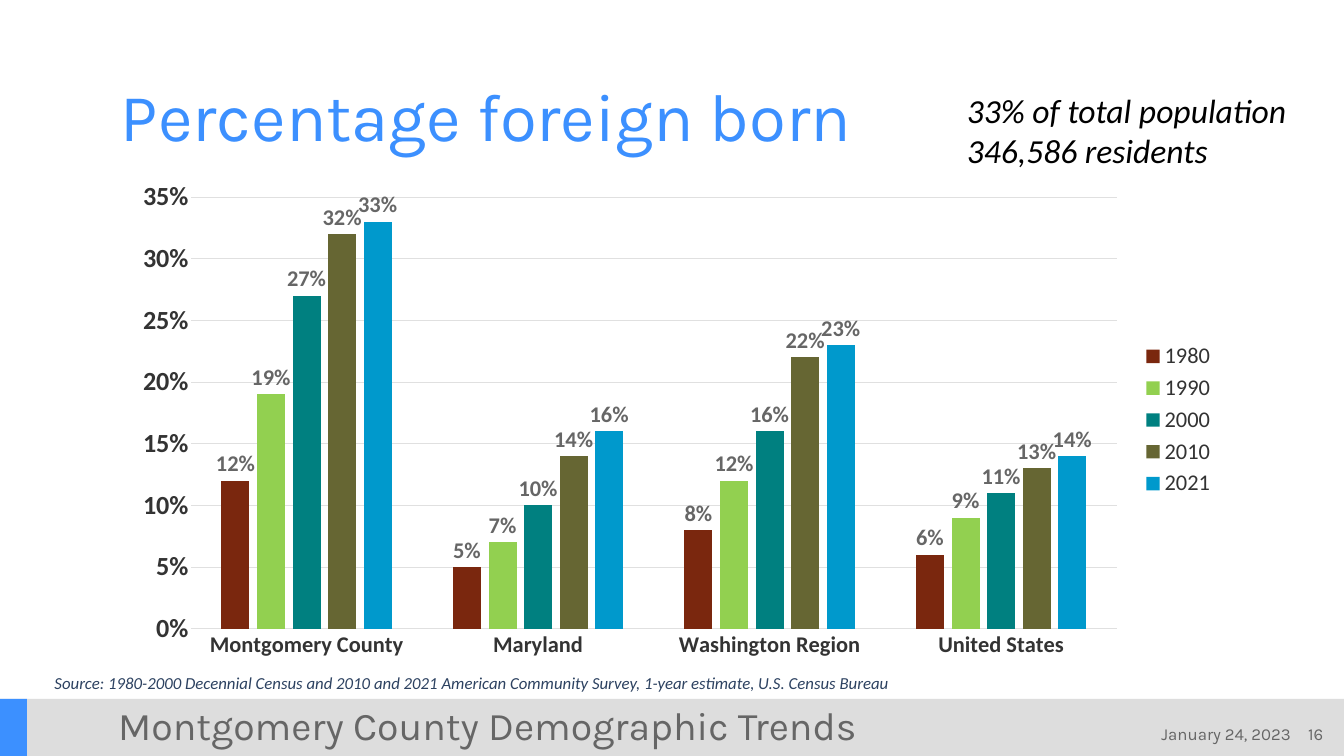
from pptx import Presentation
from pptx.chart.data import CategoryChartData
from pptx.dml.color import RGBColor
from pptx.enum import chart as chart_enum, shapes, text
from pptx.util import Inches, Pt

WHITE = RGBColor(0xFF, 0xFF, 0xFF)
BLACK = RGBColor(0x00, 0x00, 0x00)
BLUE = RGBColor(0x3C, 0x90, 0xFF)
NAVY = RGBColor(0x2D, 0x42, 0x61)
BAND = RGBColor(0xDD, 0xDD, 0xDD)
RULE = RGBColor(0xE0, 0xE0, 0xE0)
GRAY = RGBColor(0x66, 0x66, 0x66)
DARK = RGBColor(0x33, 0x33, 0x33)

REGIONS = ["Montgomery County", "Maryland", "Washington Region", "United States"]
FOREIGN_BORN = [
    ("1980", (0.12, 0.05, 0.08, 0.06), RGBColor(0x7A, 0x27, 0x0E)),
    ("1990", (0.19, 0.07, 0.12, 0.09), RGBColor(0x92, 0xD0, 0x50)),
    ("2000", (0.27, 0.10, 0.16, 0.11), RGBColor(0x00, 0x80, 0x80)),
    ("2010", (0.32, 0.14, 0.22, 0.13), RGBColor(0x66, 0x66, 0x33)),
    ("2021", (0.33, 0.16, 0.23, 0.14), RGBColor(0x00, 0x99, 0xCC)),
]


class SlideBuilder:
    """Holds the slide and its fonts, and adds each kind of element."""

    heading_font = "Karla"
    body_font = "Calibri"

    def __init__(self, presentation):
        self.slide = presentation.slides.add_slide(presentation.slide_layouts[5])
        self.slide.background.fill.solid()
        self.slide.background.fill.fore_color.rgb = WHITE

    def style(self, font, name, size, color, bold=False, italic=False):
        font.name = name
        font.size = Pt(size)
        font.color.rgb = color
        font.bold = bold
        font.italic = italic

    def place(self, box):
        return [Inches(length) for length in box]

    def set_insets(self, frame, left, top, right, bottom):
        frame.margin_left, frame.margin_top = Inches(left), Inches(top)
        frame.margin_right, frame.margin_bottom = Inches(right), Inches(bottom)

    def bar(self, box, color):
        shape = self.slide.shapes.add_shape(shapes.MSO_SHAPE.RECTANGLE, *self.place(box))
        shape.shadow.inherit = False
        shape.fill.solid()
        shape.fill.fore_color.rgb = color
        shape.line.fill.background()

    def title(self, words, box):
        title = self.slide.shapes.title
        title.left, title.top, title.width, title.height = self.place(box)
        frame = title.text_frame
        frame.text = words
        frame.word_wrap = True
        frame.auto_size = text.MSO_AUTO_SIZE.NONE
        frame.vertical_anchor = text.MSO_ANCHOR.BOTTOM
        self.set_insets(frame, 0, 0.05, 0.1, 0)
        paragraph = frame.paragraphs[0]
        paragraph.alignment = text.PP_ALIGN.LEFT
        paragraph.line_spacing = 0.8
        self.style(paragraph.runs[0].font, self.heading_font, 72, BLUE)

    def footer(self, words, box, size, anchor, alignment):
        frame = self.slide.shapes.add_textbox(*self.place(box)).text_frame
        frame.text = words
        frame.word_wrap = True
        frame.vertical_anchor = anchor
        self.set_insets(frame, 0, 0, 0, 0)
        paragraph = frame.paragraphs[0]
        paragraph.alignment = alignment
        self.style(paragraph.runs[0].font, self.heading_font, size, GRAY)

    def note(self, words, box, size, color, insets=(0.1, 0.05, 0.1, 0.05)):
        frame = self.slide.shapes.add_textbox(*self.place(box)).text_frame
        frame.text = words
        frame.word_wrap = False
        frame.auto_size = text.MSO_AUTO_SIZE.SHAPE_TO_FIT_TEXT
        self.set_insets(frame, *insets)
        for paragraph in frame.paragraphs:
            self.style(paragraph.runs[0].font, self.body_font, size, color, italic=True)

    def column_chart(self, categories, series_rows, box):
        data = CategoryChartData(number_format="0%")
        data.categories = categories
        for name, values, _ in series_rows:
            data.add_series(name, values)
        chart = self.slide.shapes.add_chart(
            chart_enum.XL_CHART_TYPE.COLUMN_CLUSTERED, *self.place(box), data
        ).chart
        self.style(chart.font, self.body_font, 10, DARK)
        chart.has_title = False
        chart.has_legend = True
        chart.legend.position = chart_enum.XL_LEGEND_POSITION.RIGHT
        chart.legend.include_in_layout = False
        self.style(chart.legend.font, self.body_font, 24, DARK)
        self.axes(chart)
        plot = chart.plots[0]
        plot.gap_width = 219
        plot.overlap = -27
        plot.vary_by_categories = False
        for series, (_, _, color) in zip(plot.series, series_rows):
            series.format.fill.solid()
            series.format.fill.fore_color.rgb = color
            series.invert_if_negative = False
            labels = series.data_labels
            labels.show_value = True
            labels.number_format = "0%"
            labels.number_format_is_linked = False
            labels.position = chart_enum.XL_LABEL_POSITION.OUTSIDE_END
            self.style(labels.font, self.body_font, 24, GRAY, bold=True)

    def axes(self, chart):
        category_axis, value_axis = chart.category_axis, chart.value_axis
        for axis, size in ((category_axis, 24), (value_axis, 28)):
            axis.major_tick_mark = chart_enum.XL_TICK_MARK.NONE
            axis.minor_tick_mark = chart_enum.XL_TICK_MARK.NONE
            self.style(axis.tick_labels.font, self.body_font, size, DARK, bold=True)
        value_axis.minimum_scale = 0
        value_axis.maximum_scale = 0.35
        value_axis.major_unit = 0.05
        value_axis.tick_labels.number_format = "0%"
        value_axis.tick_labels.number_format_is_linked = False
        value_axis.format.line.fill.background()
        value_axis.has_major_gridlines = True
        for line in (category_axis.format.line, value_axis.major_gridlines.format.line):
            line.color.rgb = RULE
            line.width = Pt(0.75)


def main():
    presentation = Presentation()
    presentation.slide_width = Inches(20)
    presentation.slide_height = Inches(11.25)
    builder = SlideBuilder(presentation)

    builder.bar((0, 10.4, 20, 0.85), BAND)
    builder.bar((0, 10.4, 0.4, 0.85), BLUE)
    builder.footer("Montgomery County Demographic Trends", (1.76, 10.49, 16.4, 0.6), 42,
                   text.MSO_ANCHOR.MIDDLE, text.PP_ALIGN.LEFT)
    for words, box in (("16", (18.72, 10.82, 0.97, 0.25)),
                       ("January 24, 2023", (16.4, 10.82, 2.81, 0.25))):
        builder.footer(words, box, 18, text.MSO_ANCHOR.BOTTOM, text.PP_ALIGN.RIGHT)

    builder.title("Percentage foreign born", (1.8, 0.5, 16.4, 1.8))
    builder.note("33% of total population\n346,586 residents", (14.29, 1.29, 5, 1.31), 36, BLACK)
    builder.column_chart(REGIONS, FOREIGN_BORN, (1.8, 2.55, 16.4, 7.4))
    builder.note(
        "Source: 1980-2000 Decennial Census and 2010 and 2021 American Community Survey, "
        "1-year estimate, U.S. Census Bureau",
        (0.7, 9.95, 12.78, 0.42), 18, NAVY, (0.11, 0.06, 0.11, 0.06))
    presentation.save("out.pptx")


if __name__ == "__main__":
    main()
